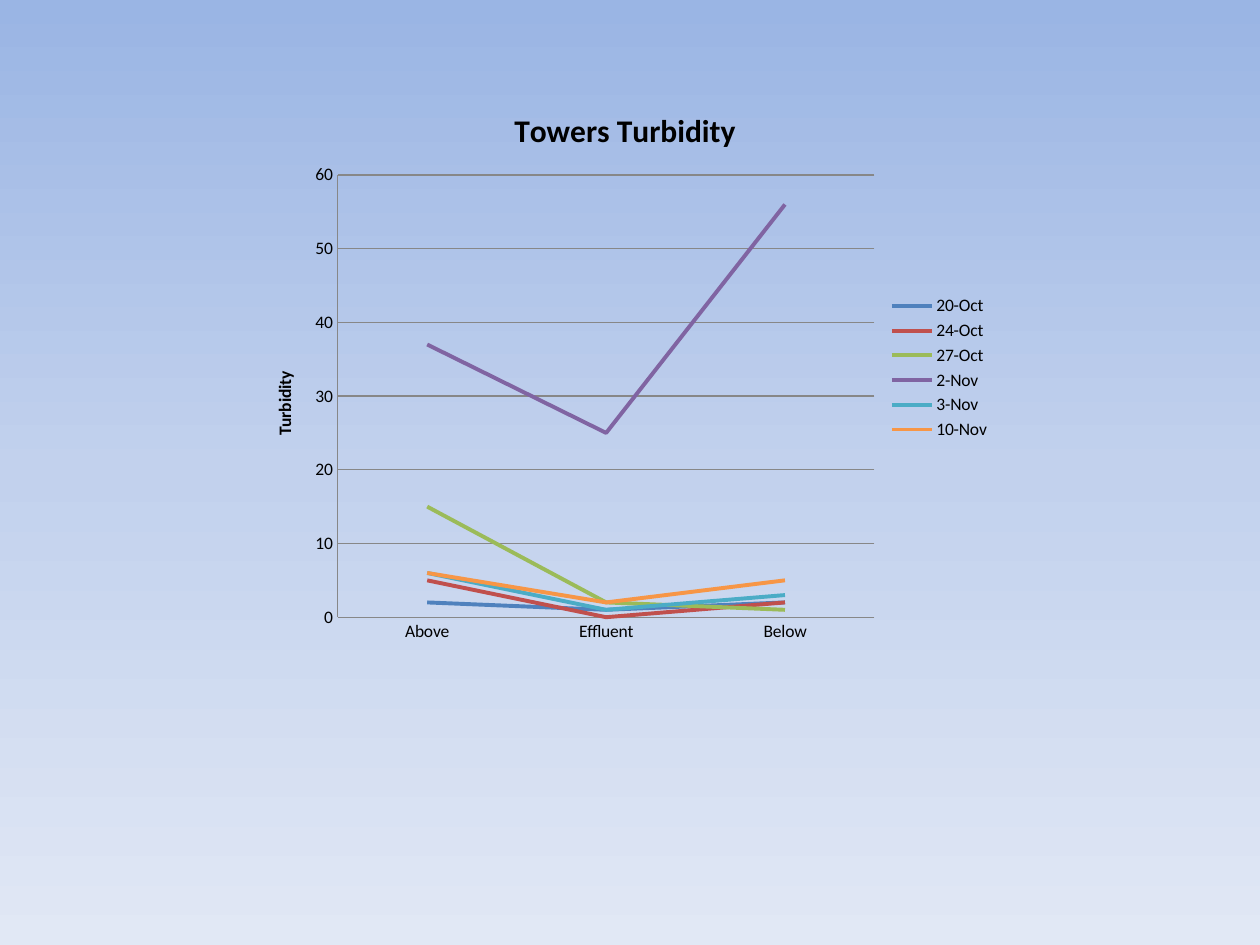
from copy import deepcopy

from lxml import etree
from pptx import Presentation
from pptx.chart.data import CategoryChartData
from pptx.dml.color import RGBColor
from pptx.enum.chart import XL_CHART_TYPE, XL_LEGEND_POSITION, XL_MARKER_STYLE, XL_TICK_MARK
from pptx.oxml.ns import qn
from pptx.util import Cm, Pt

LINE = XL_CHART_TYPE.LINE
RIGHT = XL_LEGEND_POSITION.RIGHT
NO_MARK = XL_MARKER_STYLE.NONE
NO_TICK = XL_TICK_MARK.NONE

TITLE = "Towers Turbidity"
AXIS = "Turbidity"
SITES = ["Above", "Effluent", "Below"]
DAYS = [
    ("20-Oct", (2, 1, 2), "4F81BD"),
    ("24-Oct", (5, 0, 2), "C0504D"),
    ("27-Oct", (15, 2, 1), "9BBB59"),
    ("2-Nov", (37, 25, 56), "8064A2"),
    ("3-Nov", (6, 1, 3), "4BACC6"),
    ("10-Nov", (6, 2, 5), "F79646"),
]
THEME = {
    "font": "Calibri", "text": "000000", "rule": "878787",
    "title": 18, "body": 10, "line": 2.25, "thin": 0.75,
    "sky": [(0, "9AB5E4"), (0.5, "C2D1ED"), (1, "E1E8F5")],
}
PLOT = {"x": 0.12, "y": 0.16, "w": 0.71, "h": 0.78}


def color(name):
    return RGBColor.from_string(name)


def style(font, size, bold):
    font.name = THEME["font"]
    font.size = Pt(size)
    font.bold = bold
    font.color.rgb = color(THEME["text"])


def label(owner, text, size):
    """Give a chart or an axis its bold title."""
    run = owner.text_frame.paragraphs[0].add_run()
    run.text = text
    style(run.font, size, True)


def rule(line):
    line.color.rgb = color(THEME["rule"])
    line.width = Pt(THEME["thin"])


def paint(slide):
    """Fill the background from top to bottom."""
    fill = slide.background.fill
    fill.gradient()
    fill.gradient_angle = 270
    stops = next(slide.element.iter(qn("a:gsLst")))
    stops.insert(1, deepcopy(stops[0]))
    for stop, (place, shade) in zip(fill.gradient_stops, THEME["sky"]):
        stop.position = place
        stop.color.rgb = color(shade)


def place_plot(chart):
    """Fix the inner plot area as shares of the chart."""
    area = next(chart.element.iter(qn("c:plotArea")))
    for old in area.findall(qn("c:layout")):
        area.remove(old)
    layout = etree.Element(qn("c:layout"))
    area.insert(0, layout)
    manual = etree.SubElement(layout, qn("c:manualLayout"))
    parts = [("layoutTarget", "inner"), ("xMode", "edge"), ("yMode", "edge")]
    for tag, value in parts + list(PLOT.items()):
        etree.SubElement(manual, qn("c:" + tag), val=str(value))


def draw(slide):
    data = CategoryChartData()
    data.categories = SITES
    for day, values, _ in DAYS:
        data.add_series(day, values)
    chart = slide.shapes.add_chart(
        LINE, Cm(4.98), Cm(1.7), Cm(15.24), Cm(11.43), data).chart
    style(chart.font, THEME["body"], False)
    chart.has_title = True
    label(chart.chart_title, TITLE, THEME["title"])
    chart.has_legend = True
    chart.legend.position = RIGHT
    chart.legend.include_in_layout = False

    for axis in (chart.category_axis, chart.value_axis):
        axis.major_tick_mark = NO_TICK
        axis.minor_tick_mark = NO_TICK
        rule(axis.format.line)
    scale = chart.value_axis
    scale.minimum_scale, scale.maximum_scale, scale.major_unit = 0, 60, 10
    scale.has_major_gridlines = True
    rule(scale.major_gridlines.format.line)
    label(scale.axis_title, AXIS, THEME["body"])

    plot = chart.plots[0]
    plot.vary_by_categories = False
    for series, (_, _, shade) in zip(plot.series, DAYS):
        series.smooth = False
        series.marker.style = NO_MARK
        series.format.line.color.rgb = color(shade)
        series.format.line.width = Pt(THEME["line"])
    place_plot(chart)


def main():
    deck = Presentation()
    deck.slide_width, deck.slide_height = Cm(25.4), Cm(19.05)
    slide = deck.slides.add_slide(deck.slide_layouts[6])
    paint(slide)
    draw(slide)
    deck.save("out.pptx")


if __name__ == "__main__":
    main()
